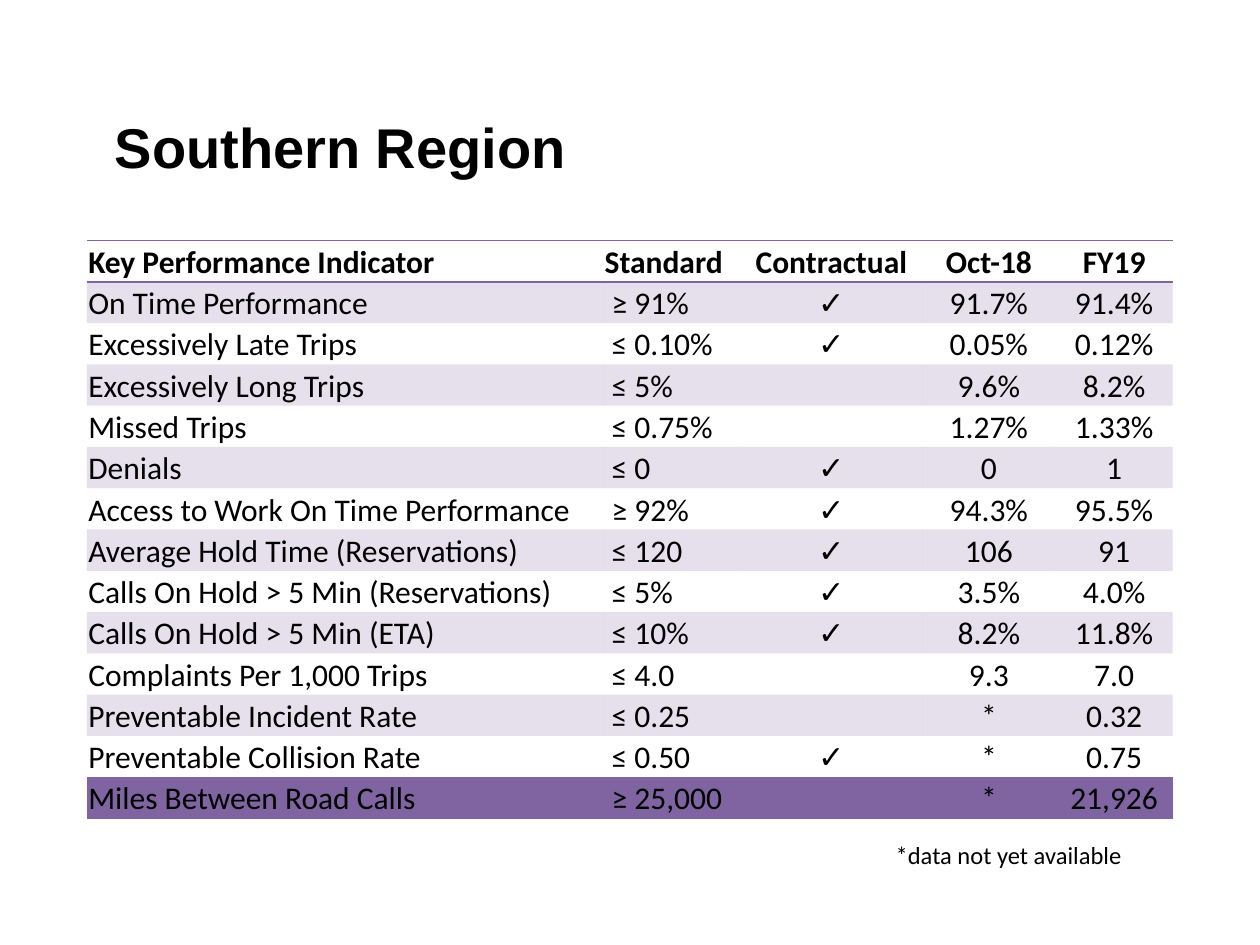
"""Build the Southern Region key performance indicator slide."""
from typing import NamedTuple

from lxml.etree import SubElement
from pptx import Presentation
from pptx.dml.color import RGBColor
from pptx.enum.text import MSO_ANCHOR as Anchor, PP_ALIGN as Align
from pptx.oxml.ns import qn
from pptx.util import Cm, Pt

COLORS = {"text": "000000", "accent": "8064A2"}
BAND_ALPHA = "20000"
PLAIN_STYLE = "{2D5ABB26-0587-4C30-8999-92F81FD0307C}"
CHECK = "✓"


class Column(NamedTuple):
    heading: str
    width: float
    align: Align
    inset: float = 0.03


class Indicator(NamedTuple):
    name: str
    standard: str
    contractual: str
    month: str
    year: str


COLUMNS = [
    Column("Key Performance Indicator", 10.41, Align.LEFT),
    Column("Standard", 2.77, Align.LEFT, 0.17),
    Column("Contractual", 3.66, Align.CENTER),
    Column("Oct-18", 2.69, Align.CENTER),
    Column("FY19", 2.36, Align.CENTER),
]
INDICATORS = [
    Indicator("On Time Performance", "≥ 91%", CHECK, "91.7%", "91.4%"),
    Indicator("Excessively Late Trips", "≤ 0.10%", CHECK, "0.05%", "0.12%"),
    Indicator("Excessively Long Trips", "≤ 5%", "", "9.6%", "8.2%"),
    Indicator("Missed Trips", "≤ 0.75%", "", "1.27%", "1.33%"),
    Indicator("Denials", "≤ 0", CHECK, "0", "1"),
    Indicator("Access to Work On Time Performance", "≥ 92%", CHECK, "94.3%", "95.5%"),
    Indicator("Average Hold Time (Reservations)", "≤ 120", CHECK, "106", "91"),
    Indicator("Calls On Hold > 5 Min (Reservations)", "≤ 5%", CHECK, "3.5%", "4.0%"),
    Indicator("Calls On Hold > 5 Min (ETA)", "≤ 10%", CHECK, "8.2%", "11.8%"),
    Indicator("Complaints Per 1,000 Trips", "≤ 4.0", "", "9.3", "7.0"),
    Indicator("Preventable Incident Rate", "≤ 0.25", "", "*", "0.32"),
    Indicator("Preventable Collision Rate", "≤ 0.50", CHECK, "*", "0.75"),
    Indicator("Miles Between Road Calls", "≥ 25,000", "", "*", "21,926"),
]


def write(frame, text: str, *, size: float = 18, font: str = "Calibri",
          bold: bool = False, align: Align = Align.LEFT) -> None:
    para = frame.paragraphs[0]
    para.alignment = align
    span = para.add_run()
    span.text = text
    span.font.size = Pt(size)
    span.font.name = font
    span.font.bold = bold
    span.font.color.rgb = RGBColor.from_string(COLORS["text"])


def add_border(cell, side: str) -> None:
    line = SubElement(cell._tc.get_or_add_tcPr(), qn(f"a:{side}"), w=str(Pt(1)))
    fill = SubElement(line, qn("a:solidFill"))
    SubElement(fill, qn("a:srgbClr"), val=COLORS["accent"])


def fill_band(cell) -> None:
    cell.fill.solid()
    cell.fill.fore_color.rgb = RGBColor.from_string(COLORS["accent"])
    color = cell._tc.tcPr.find(".//" + qn("a:srgbClr"))
    SubElement(color, qn("a:alpha"), val=BAND_ALPHA)


def draw_cell(cell, text: str, column: Column, row: int) -> None:
    is_header = row == 0
    cell.vertical_anchor = Anchor.BOTTOM
    cell.margin_left = Cm(0.03 if is_header else column.inset)
    cell.margin_right = cell.margin_top = Cm(0.03)
    cell.margin_bottom = 0
    if is_header:
        add_border(cell, "lnT")
    if row in (0, len(INDICATORS)):
        add_border(cell, "lnB")
    if row % 2:
        fill_band(cell)
    else:
        cell.fill.background()
    if text:
        write(cell.text_frame, text, bold=is_header, align=column.align)


def draw_table(page) -> None:
    rows = [[column.heading for column in COLUMNS], *INDICATORS]
    width = Cm(sum(column.width for column in COLUMNS))
    frame = page.shapes.add_table(len(rows), len(COLUMNS), Cm(1.75), Cm(4.85),
                                  width, Cm(11.66))
    table = frame.table
    table.first_row = table.horz_banding = False
    table._tbl.tblPr.find(qn("a:tableStyleId")).text = PLAIN_STYLE
    for index, column in enumerate(COLUMNS):
        table.columns[index].width = Cm(column.width)
        for row, values in enumerate(rows):
            draw_cell(table.cell(row, index), values[index], column, row)


def draw_title(page) -> None:
    title = page.shapes.title
    title.left, title.top = Cm(2.06), Cm(2.13)
    title.width, title.height = Cm(21.31), Cm(1.63)
    title.text_frame.vertical_anchor = Anchor.MIDDLE
    write(title.text_frame, "Southern Region", size=32, font="Arial", bold=True)


def draw_footnote(page) -> None:
    box = page.shapes.add_textbox(Cm(16.36), Cm(16.81), Cm(6.5), Cm(0.86))
    box.text_frame.word_wrap = True
    write(box.text_frame, "*data not yet available", size=14, align=Align.RIGHT)


def main() -> None:
    deck = Presentation()
    deck.slide_width, deck.slide_height = Cm(25.4), Cm(19.05)
    page = deck.slides.add_slide(deck.slide_layouts[5])
    draw_title(page)
    draw_table(page)
    draw_footnote(page)
    deck.save("out.pptx")


if __name__ == "__main__":
    main()
